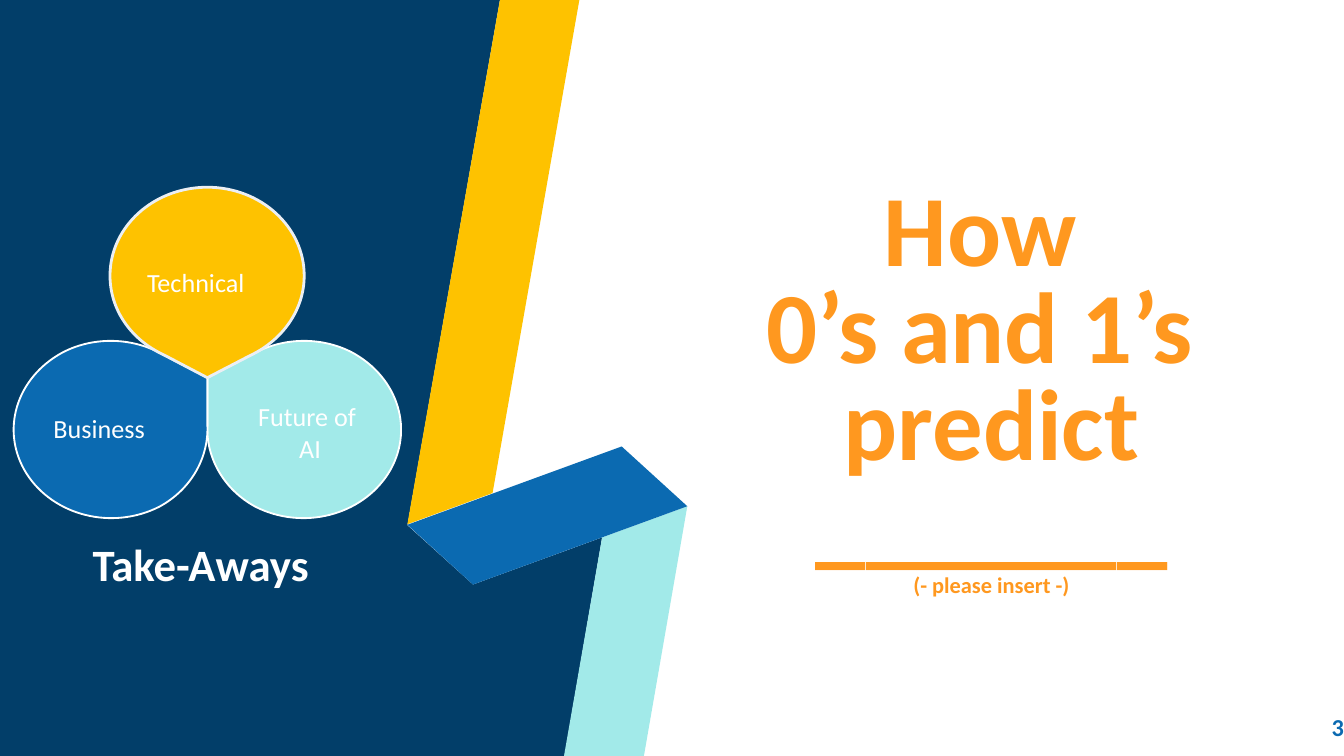
"""Build the "How 0's and 1's predict" section slide."""
from lxml import etree
from pptx import Presentation
from pptx.dml.color import RGBColor
from pptx.enum.text import MSO_ANCHOR, MSO_AUTO_SIZE, PP_ALIGN
from pptx.oxml.ns import qn
from pptx.util import Cm, Pt

LEFT, CENTER, RIGHT = PP_ALIGN.LEFT, PP_ALIGN.CENTER, PP_ALIGN.RIGHT
TOP, MIDDLE, BOTTOM = MSO_ANCHOR.TOP, MSO_ANCHOR.MIDDLE, MSO_ANCHOR.BOTTOM
NO_FIT = MSO_AUTO_SIZE.NONE
TITLE_ONLY = 5
FONT = "Calibri"
WIDTH, HEIGHT = 25.4, 14.29
COLORS = {
    "navy": "023E69",
    "yellow": "FEC200",
    "aqua": "A2EAE9",
    "blue": "0B6AB1",
    "orange": "FF981F",
    "white": "FFFFFF",
    "pale": "ECEFF3",
}
RIBBON = [
    ("navy", [(8.94, 11.05), (7.7, 9.93), (9.45, 0), (0, 0), (0, HEIGHT),
              (10.67, HEIGHT), (11.38, 10.16)]),
    ("yellow", [(9.45, 0), (7.7, 9.91), (9.31, 9.32), (10.95, 0)]),
    ("aqua", [(12.17, HEIGHT), (12.99, 9.57), (11.38, 10.16),
              (10.66, HEIGHT)]),
    ("blue", [(12.99, 9.57), (8.94, 11.05), (7.7, 9.92), (11.75, 8.44)]),
]
HUB = (3.92, 7.14)
SIDE_PETAL = [
    [(4.83, 9.58)],
    [(5.72, 10.03), (6.83, 9.75), (7.34, 8.95)],
    [(7.84, 8.15), (7.54, 7.14), (6.65, 6.66)],
    [(6.05, 6.35), (5.31, 6.38), (4.75, 6.71)],
    [HUB],
    [(3.92, 8.03)],
    [(3.89, 8.64), (4.22, 9.25), (4.83, 9.58)],
]
TOP_PETAL = [
    [(5.75, 5.21)],
    [(5.75, 4.29), (4.93, 3.54), (3.92, 3.54)],
    [(2.9, 3.54), (2.08, 4.29), (2.08, 5.21)],
    [(2.08, 5.87), (2.49, 6.43), (3.1, 6.71)],
    [HUB],
    [(4.75, 6.71)],
    [(5.33, 6.43), (5.75, 5.87), (5.75, 5.21)],
]
LABELS = [
    ("Take-Aways", (1.5, 10.03, 5.74, 1.27), {"size": 24, "bold": True}),
    ("Technical", (2.53, 4.92, 2.84, 0.86), {}),
    ("Business", (0.76, 7.67, 2.84, 0.86), {}),
    ("Future of \nAI", (4.44, 7.45, 2.84, 1.45), {"align": CENTER}),
]


def rgb(name):
    """Return the named colour."""
    return RGBColor.from_string(COLORS[name])


def mirror(segments):
    """Reflect outline segments across the vertical line through the hub."""
    return [[(2 * HUB[0] - x, y) for x, y in points] for points in segments]


def add_outline(slide, segments, fill, line=None, width=1):
    """Draw a closed shape of one-point lines and three-point curves."""
    corners = [(Cm(x), Cm(y)) for points in segments for x, y in points]
    builder = slide.shapes.build_freeform(*corners[0])
    builder.add_line_segments(corners[1:], close=True)
    sp = builder.convert_to_shape()
    steps = iter(sp.element.findall(".//" + qn("a:lnTo")))
    for points in segments[1:]:
        group = [next(steps) for _ in points]
        if len(group) == 3:
            curve = etree.Element(qn("a:cubicBezTo"))
            group[0].addprevious(curve)
            for step in group:
                curve.append(step[0])
                step.getparent().remove(step)
    sp.shadow.inherit = False
    sp.fill.solid()
    sp.fill.fore_color.rgb = rgb(fill)
    if line:
        sp.line.color.rgb = rgb(line)
        sp.line.width = Pt(width)
    else:
        sp.line.fill.background()


def set_text(sp, text, box, size=14, color="white", bold=False, align=LEFT,
             anchor=TOP, spacing=None, inset=True, last_size=None):
    """Place a text shape and fill it with one paragraph per line."""
    sp.left, sp.top, sp.width, sp.height = map(Cm, box)
    tf = sp.text_frame
    tf.word_wrap = True
    tf.auto_size = NO_FIT
    tf.vertical_anchor = anchor
    if not inset:
        tf.margin_left = tf.margin_right = tf.margin_top = tf.margin_bottom = 0
    tf.text = text
    for p in tf.paragraphs:
        p.alignment = align
        p.line_spacing = spacing
        for r in p.runs:
            r.font.name = FONT
            r.font.size = Pt(size)
            r.font.bold = bold
            r.font.color.rgb = rgb(color)
    if last_size:
        tf.paragraphs[-1].runs[0].font.size = Pt(last_size)


def add_text(slide, text, box, **fmt):
    """Add a formatted text box."""
    set_text(slide.shapes.add_textbox(0, 0, 0, 0), text, box, **fmt)


def main():
    """Build and save the slide."""
    prs = Presentation()
    prs.slide_width, prs.slide_height = Cm(WIDTH), Cm(HEIGHT)
    slide = prs.slides.add_slide(prs.slide_layouts[TITLE_ONLY])
    for color, points in RIBBON:
        add_outline(slide, [[point] for point in points], color)
    set_text(slide.shapes.title,
             "How \n0’s and 1’s \npredict _______\n(- please insert -)",
             (12.43, 2.38, 12.62, 8.92), size=54, color="orange", bold=True,
             align=CENTER, anchor=BOTTOM, spacing=0.8, inset=False,
             last_size=12)
    add_outline(slide, SIDE_PETAL, "aqua", "white")
    add_outline(slide, mirror(SIDE_PETAL), "blue", "white")
    add_outline(slide, TOP_PETAL, "yellow", "pale", 1.5)
    for text, box, fmt in LABELS:
        add_text(slide, text, box, **fmt)
    add_text(slide, "3", (23.88, 13.19, 1.52, 1.09), size=13, color="blue",
             bold=True, align=RIGHT, anchor=MIDDLE, inset=False)
    prs.save("out.pptx")


if __name__ == "__main__":
    main()
